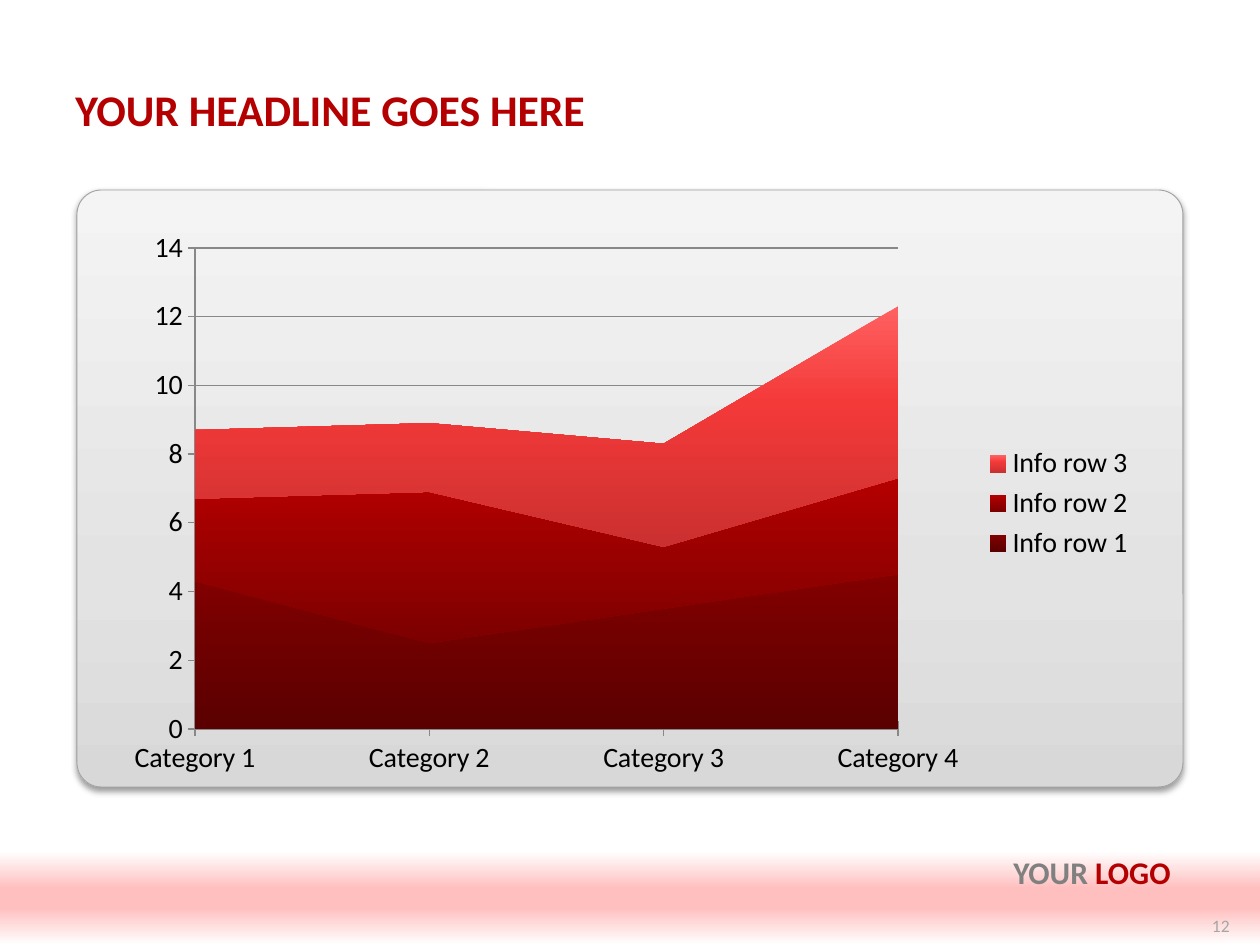
import lxml.etree
import pptx
import pptx.chart.data
import pptx.dml.color
import pptx.enum.chart
import pptx.enum.shapes
import pptx.enum.text
import pptx.oxml.ns
import pptx.util

PX = 914400 / 126
FONT = "Calibri"
COLORS = {
    "red": "B40000", "grey": "808080", "number": "A6A6A6", "text": "000000",
    "axis": "888888", "border": "A1A1A1",
}
PANEL = [(0, "F4F4F4"), (65, "E3E3E3"), (100, "D8D8D8")]
BAND = [(0, "FFFFFF"), (40, "FFBFBF"), (60, "FFBFBF"), (100, "FFFFFF")]
CATEGORIES = [f"Category {n}" for n in range(1, 5)]
SERIES = [
    ("Info row 1", (4.3, 2.5, 3.5, 4.5), [(0, "820000"), (100, "5A0000")]),
    ("Info row 2", (2.4, 4.4, 1.8, 2.8), [(0, "B40000"), (100, "7C0000")]),
    ("Info row 3", (2, 2, 3, 5), [(0, "FF6161"), (40, "F43939"), (100, "CB3030")]),
]
qn = pptx.oxml.ns.qn


def emu(*px):
    """Turn px lengths into EMU."""
    return [pptx.util.Emu(round(v * PX)) for v in px]


def rgb(name):
    """Return the named colour."""
    return pptx.dml.color.RGBColor.from_string(COLORS[name])


def add(parent, tag, **attrs):
    """Append an XML child with the given attributes."""
    return lxml.etree.SubElement(parent, qn(tag), {k: str(v) for k, v in attrs.items()})


def assign(obj, values):
    """Set attributes from a dict."""
    for name, value in values.items():
        setattr(obj, name, value)


def style(font, size, color, bold=False):
    """Format a font."""
    assign(font, {"name": FONT, "size": pptx.util.Pt(size), "bold": bold})
    font.color.rgb = rgb(color)


def gradient(fill, element, stops):
    """Fill from top to bottom with percent and colour stops."""
    fill.gradient()
    fill.gradient_angle = 270
    stop_list = element.find(".//" + qn("a:gsLst"))
    for old in list(stop_list):
        stop_list.remove(old)
    for percent, color in stops:
        add(add(stop_list, "a:gs", pos=percent * 1000), "a:srgbClr", val=color)


def add_box(s, kind, box, stops):
    """Add a borderless gradient shape."""
    sp = s.shapes.add_shape(kind, *emu(*box))
    sp.shadow.inherit = False
    sp.line.fill.background()
    gradient(sp.fill, sp._element.spPr, stops)
    return sp


def add_text(s, box, runs, size, bold=False, align="LEFT", anchor="MIDDLE"):
    """Add one line of coloured runs."""
    tf = s.shapes.add_textbox(*emu(*box)).text_frame
    assign(tf, {"word_wrap": True,
                "vertical_anchor": getattr(pptx.enum.text.MSO_ANCHOR, anchor)})
    p = tf.paragraphs[0]
    p.alignment = getattr(pptx.enum.text.PP_ALIGN, align)
    for text, color in runs:
        r = p.add_run()
        r.text = text
        style(r.font, size, color, bold)


def add_panel(s, box):
    """Add the rounded panel with a soft shadow."""
    sp = add_box(s, pptx.enum.shapes.MSO_SHAPE.ROUNDED_RECTANGLE, box, PANEL)
    sp.adjustments[0] = 0.041
    sp.line.color.rgb = rgb("border")
    sp.line.width = pptx.util.Pt(0.5)
    effects = sp._element.spPr.find(qn("a:effectLst"))
    shadow = add(effects, "a:outerShdw", blurRad=44450, dist=25400, dir=5400000, rotWithShape=0)
    add(add(shadow, "a:srgbClr", val="000000"), "a:alpha", val=38000)


def set_plot_box(chart, box, frame):
    """Place the inner plot area within the chart frame."""
    plot_area = chart._chartSpace.chart.plotArea
    for old in plot_area.findall(qn("c:layout")):
        plot_area.remove(old)
    layout = add(plot_area, "c:layout")
    plot_area.insert(0, layout)
    manual = add(layout, "c:manualLayout")
    add(manual, "c:layoutTarget", val="inner")
    for side in "xy":
        add(manual, f"c:{side}Mode", val="edge")
    for side, length, whole in zip("xywh", box, frame[2:] * 2):
        add(manual, f"c:{side}", val=round(length / whole, 4))


def add_chart(s, box):
    """Add the stacked area chart."""
    enums = pptx.enum.chart
    data = pptx.chart.data.CategoryChartData()
    data.categories = CATEGORIES
    for name, values, _ in SERIES:
        data.add_series(name, values)
    chart = s.shapes.add_chart(enums.XL_CHART_TYPE.AREA_STACKED, *emu(*box), data).chart
    assign(chart, {"has_title": False, "has_legend": True})
    style(chart.font, 18, "text")
    assign(chart.legend, {"position": enums.XL_LEGEND_POSITION.RIGHT, "include_in_layout": False})
    style(chart.legend.font, 16, "text")
    chart.plots[0].vary_by_categories = False
    for series, (_, _, stops) in zip(chart.plots[0].series, SERIES):
        gradient(series.format.fill, series._element, stops)
    val_axis = chart.value_axis
    for axis in (chart.category_axis, val_axis):
        assign(axis, {"major_tick_mark": enums.XL_TICK_MARK.CROSS,
                      "minor_tick_mark": enums.XL_TICK_MARK.NONE,
                      "has_major_gridlines": axis is val_axis})
        style(axis.tick_labels.font, 16, "text")
        axis.format.line.color.rgb = rgb("axis")
    assign(val_axis, {"minimum_scale": 0, "maximum_scale": 14, "major_unit": 2})
    val_axis.major_gridlines.format.line.color.rgb = rgb("axis")
    set_plot_box(chart, (80, 28, 703, 481), box)


def add_footer(s, box):
    """Add the fading band, the logo wording and the slide number."""
    x, y, w, h = box
    add_box(s, pptx.enum.shapes.MSO_SHAPE.RECTANGLE, box, BAND)
    add_text(s, (x + w - 77, y + 56, 59, 38), [("12", "number")], 10, align="RIGHT")
    add_text(s, (x + 63, y - 4, 1120, 69), [("YOUR ", "grey"), ("LOGO", "red")],
             18, True, "RIGHT", "TOP")


def main():
    """Build and save the slide."""
    prs = pptx.Presentation()
    prs.slide_width, prs.slide_height = emu(1260, 945)
    s = prs.slides.add_slide(prs.slide_layouts[6])
    add_panel(s, (77, 190, 1106, 597))
    add_text(s, (63, 74, 1134, 69), [("YOUR HEADLINE GOES HERE", "red")], 25, True)
    add_chart(s, (115, 220, 1032, 567))
    add_footer(s, (0, 851, 1260, 94))
    prs.save("out.pptx")


if __name__ == "__main__":
    main()
